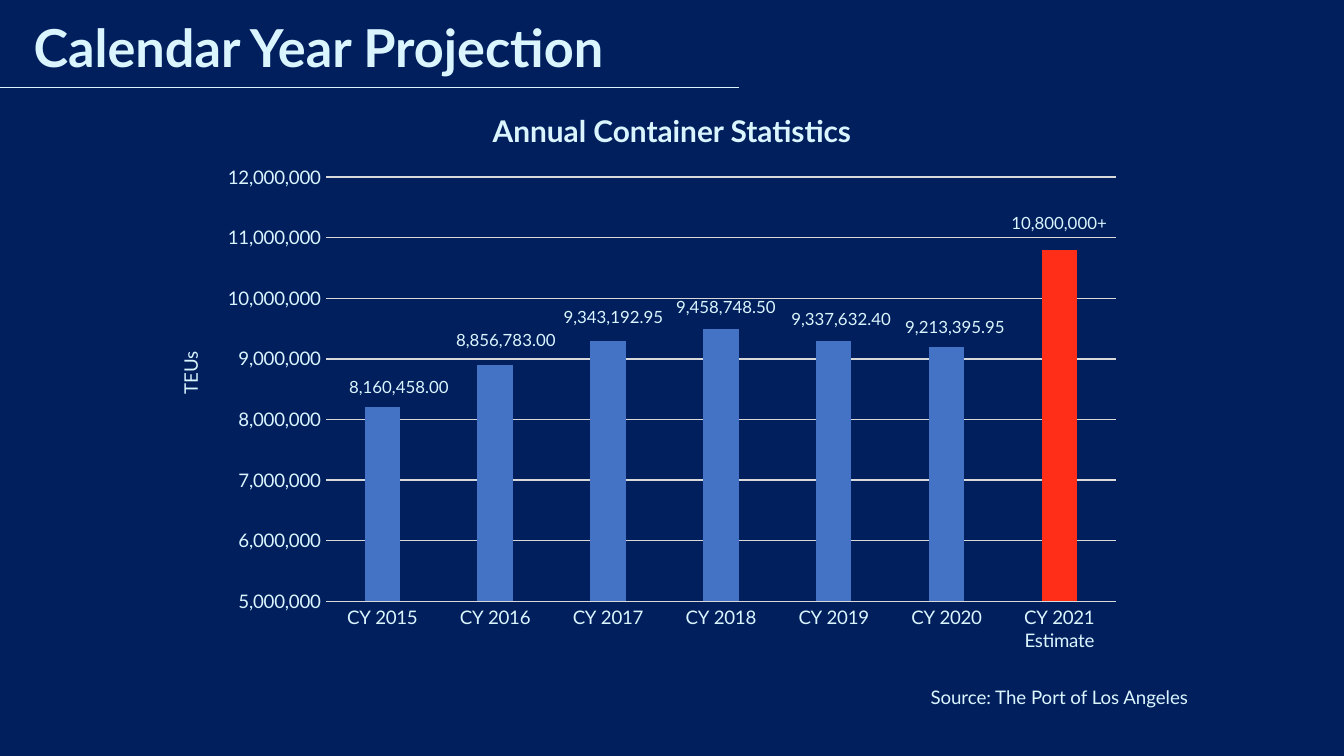
from lxml import etree
from pptx import Presentation, util as u
from pptx.chart.data import CategoryChartData
from pptx.dml.color import RGBColor
from pptx.enum import chart as ch, shapes, text
from pptx.oxml import parse_xml
from pptx.oxml.ns import qn

Pt = u.Pt
COLORS = {"navy": "001F5C", "ice": "DBF5FF", "grid": "D9D9D9",
          "bar": "4472C4", "estimate": "FF2E18"}
rgb = {k: RGBColor.from_string(v) for k, v in COLORS.items()}

prs = Presentation()
prs.slide_width, prs.slide_height = Pt(720), Pt(405)
s = prs.slides.add_slide(prs.slide_layouts[6])
s.background.fill.solid()
s.background.fill.fore_color.rgb = rgb["navy"]


def add_text(words, x, y, w, h, size, bold=False, align=text.PP_ALIGN.CENTER):
    sp = s.shapes.add_textbox(Pt(x), Pt(y), Pt(w), Pt(h))
    tf = sp.text_frame
    tf.word_wrap = True
    p = tf.paragraphs[0]
    p.alignment = align
    r = p.add_run()
    r.text = words
    f = r.font
    f.name, f.size, f.bold, f.color.rgb = "Lato", Pt(size), bold, rgb["ice"]
    return sp


# Heading and rule
sp = add_text("Calendar Year Projection", 0, 0, 655, 64, 28, True, text.PP_ALIGN.LEFT)
tf = sp.text_frame
tf.margin_left = tf.margin_top = Pt(18)
tf.margin_right = tf.margin_bottom = 0
tf.paragraphs[0].line_spacing = Pt(24)

rule = s.shapes.add_connector(shapes.MSO_CONNECTOR.STRAIGHT, 0, Pt(46.8), Pt(396), Pt(46.8))
rule.line.color.rgb = rgb["ice"]
rule.line.width = Pt(0.5)
etree.SubElement(rule._element.spPr, qn("a:effectLst"))

# Source line
add_text("Source: The Port of Los Angeles", 491.4, 363.9, 209.5, 19.4, 10,
         align=text.PP_ALIGN.LEFT)

# Column chart: year, volume, label, label left, label top
years = [
    ("CY 2015", 8200000, "8,160,458.00", 166.1, 198),
    ("CY 2016", 8900000, "8,856,783.00", 223.4, 173.1),
    ("CY 2017", 9300000, "9,343,192.95", 281, 160.6),
    ("CY 2018", 9500000, "9,458,748.50", 341.3, 155.5),
    ("CY 2019", 9300000, "9,337,632.40", 403, 162),
    ("CY 2020", 9200000, "9,213,395.95", 464, 166.3),
    ("CY 2021 Estimate", 10800000, "10,800,000+", 519.8, 110.2),
]
data = CategoryChartData(number_format="#,##0")
data.categories = [year[0] for year in years]
data.add_series("Series 1", [year[1] for year in years])
chart = s.shapes.add_chart(ch.XL_CHART_TYPE.COLUMN_CLUSTERED, Pt(112.1), Pt(83.5),
                           Pt(496.1), Pt(271.6), data).chart
chart.has_legend = chart.has_title = False
chart.font.name, chart.font.size = "Calibri", Pt(10)

plot = chart.plots[0]
plot.gap_width, plot.overlap, plot.vary_by_categories = 219, -27, False
series = plot.series[0]
for fill, color in ((series.format.fill, "bar"),
                    (series.points[len(years) - 1].format.fill, "estimate")):
    fill.solid()
    fill.fore_color.rgb = rgb[color]

for axis in (chart.category_axis, chart.value_axis):
    axis.major_tick_mark = axis.minor_tick_mark = ch.XL_TICK_MARK.NONE
    f = axis.tick_labels.font
    f.name, f.size, f.color.rgb = "Lato", Pt(10), rgb["ice"]
axis = chart.value_axis
axis.minimum_scale, axis.maximum_scale, axis.major_unit = 5000000, 12000000, 1000000
axis.tick_labels.number_format = "#,##0"
axis.tick_labels.number_format_is_linked = False
axis.format.line.fill.background()
axis.has_major_gridlines = True
for line in (axis.major_gridlines.format.line, chart.category_axis.format.line):
    line.color.rgb, line.width = rgb["grid"], Pt(0.75)

# Fixed inner plot area
area = chart._chartSpace.chart.plotArea
for old in area.findall(qn("c:layout")):
    area.remove(old)
area.insert(0, parse_xml(
    '<c:layout xmlns:c="http://schemas.openxmlformats.org/drawingml/2006/chart">'
    '<c:manualLayout><c:layoutTarget val="inner"/><c:xMode val="edge"/>'
    '<c:yMode val="edge"/><c:x val="0.126"/><c:y val="0.042"/>'
    '<c:w val="0.853"/><c:h val="0.837"/></c:manualLayout></c:layout>'))

# Axis caption, bar labels and chart heading
add_text("TEUs", 54.7, 190, 95, 19.4, 10).rotation = 270
for _, _, label, x, y in years:
    add_text(label, x, y, 95, 18, 9)
add_text("Annual Container Statistics", 225.4, 56.9, 269.3, 26.6, 16, True)

prs.save("out.pptx")
